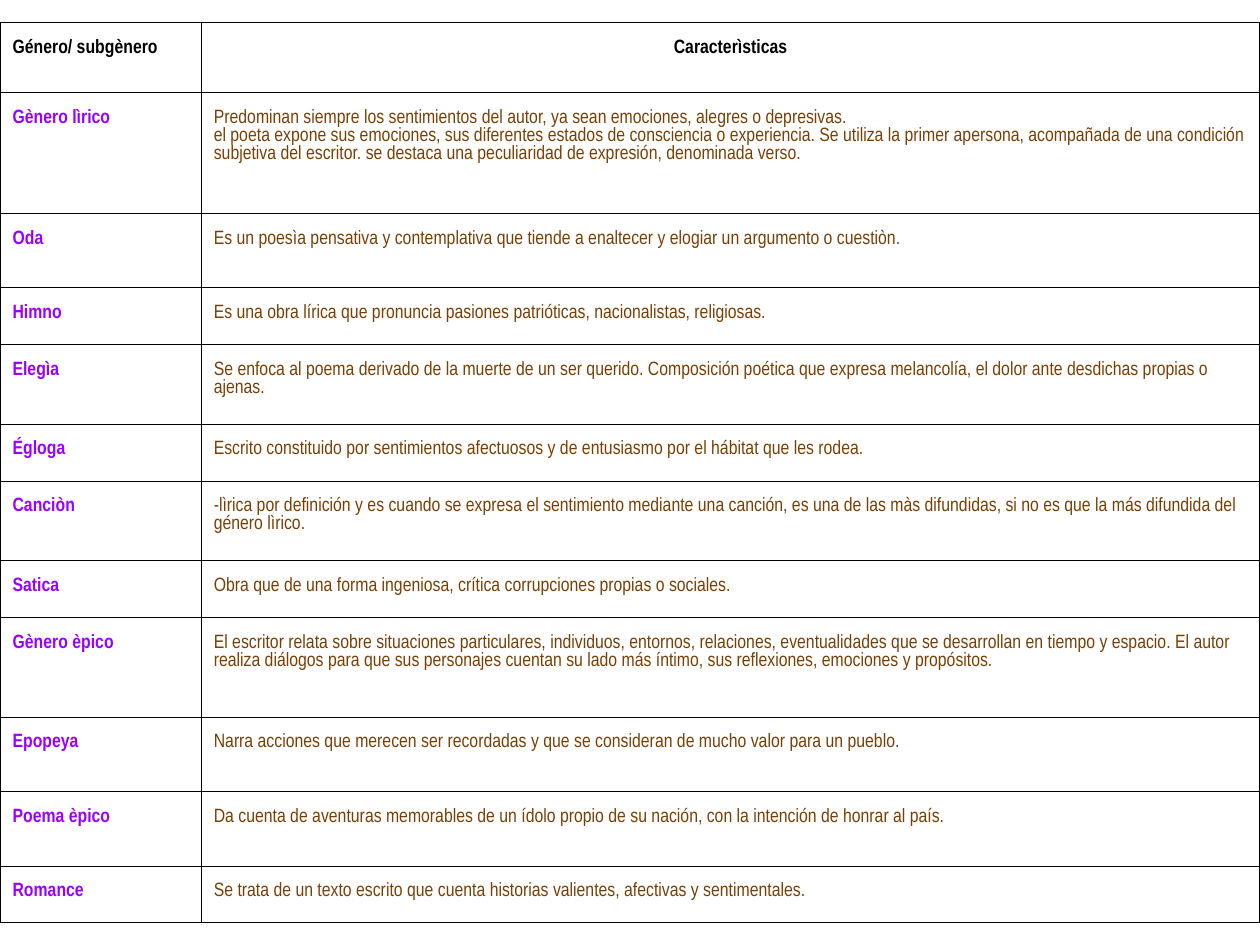
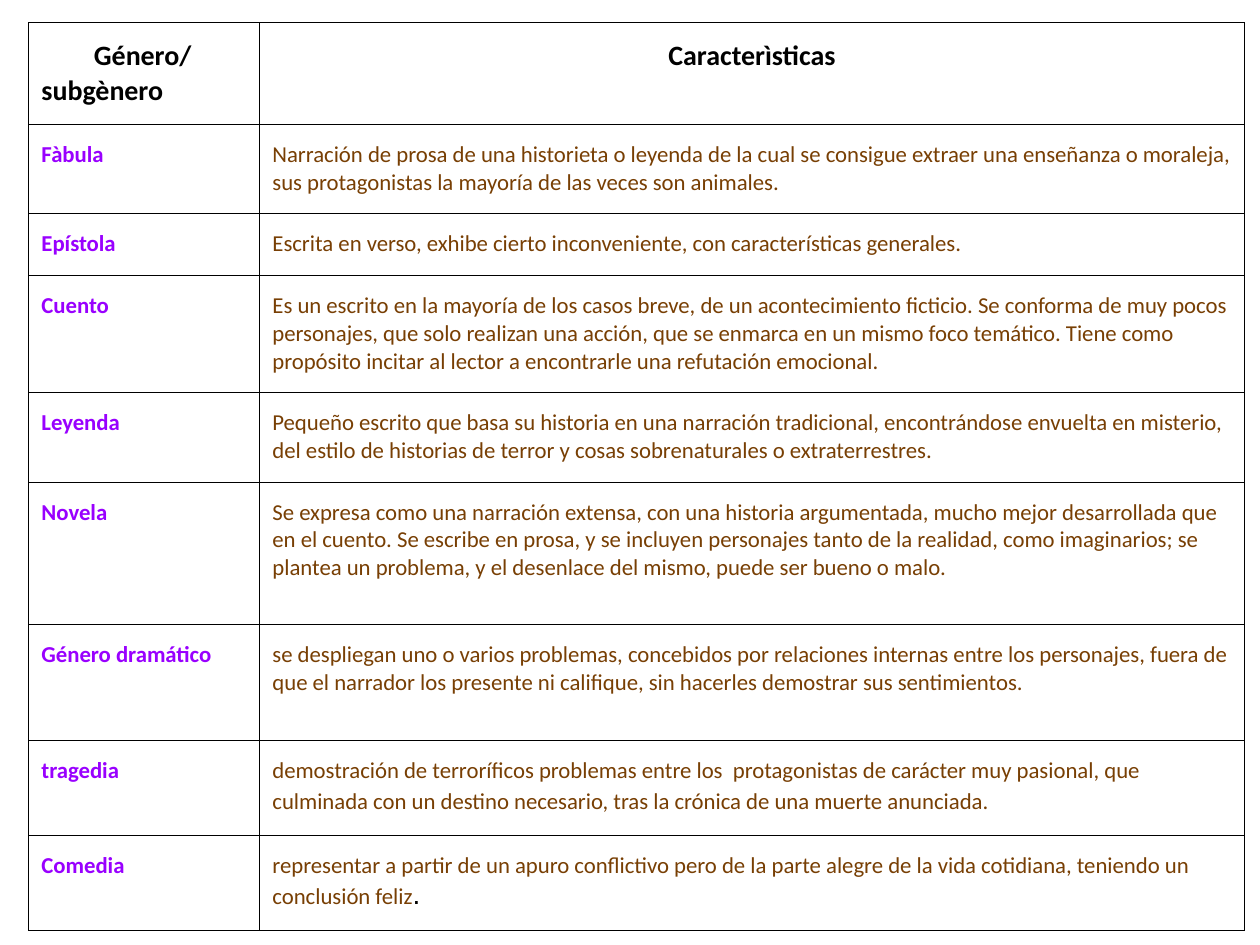
from pptx import Presentation
from pptx.dml.color import RGBColor
from pptx.enum.text import PP_ALIGN
from pptx.oxml.ns import qn
from pptx.util import Pt
from lxml import etree

LEFT, CENTER = PP_ALIGN.LEFT, PP_ALIGN.CENTER
BLACK = RGBColor(0x00, 0x00, 0x00)
PURPLE = RGBColor(0x99, 0x00, 0xFF)
BROWN = RGBColor(0x78, 0x3F, 0x04)
BORDER_WIDTH = Pt(0.75)
TABLE_TOP = Pt(13)
HEADERS = ("Género/ subgènero", "Caracterìsticas")

# Each row: height in points, genre, paragraphs of its description
LYRIC_AND_EPIC = [
    (69, "Gènero lìrico", [
        "Predominan siempre los sentimientos del autor, ya sean emociones, alegres o depresivas.",
        "el poeta expone sus emociones, sus diferentes estados de consciencia o experiencia. "
        "Se utiliza la primer apersona, acompañada de una condición subjetiva del escritor. "
        "se destaca una peculiaridad de expresión, denominada verso."]),
    (42.5, "Oda", [
        "Es un poesìa pensativa y contemplativa que tiende a enaltecer y elogiar un argumento "
        "o cuestiòn."]),
    (32.5, "Himno", [
        "Es una obra lírica que pronuncia pasiones patrióticas, nacionalistas, religiosas."]),
    (45.5, "Elegìa", [
        "Se enfoca al poema derivado de la muerte de un ser querido. Composición poética que "
        "expresa melancolía, el dolor ante desdichas propias o ajenas."]),
    (32.5, "Égloga", [
        "Escrito constituido por sentimientos afectuosos y de entusiasmo por el hábitat que "
        "les rodea."]),
    (45.5, "Canciòn", [
        "-lìrica por definición y es cuando se expresa el sentimiento mediante una canción, "
        "es una de las màs difundidas, si no es que la más difundida del género lìrico."]),
    (32.5, "Satica", [
        "Obra que de una forma ingeniosa, crítica corrupciones propias o sociales."]),
    (57, "Gènero èpico", [
        "El escritor relata sobre situaciones particulares, individuos, entornos, relaciones, "
        "eventualidades que se desarrollan en tiempo y espacio. El autor realiza diálogos para "
        "que sus personajes cuentan su lado más íntimo, sus reflexiones, emociones y propósitos."]),
    (42.5, "Epopeya", [
        "Narra acciones que merecen ser recordadas y que se consideran de mucho valor para "
        "un pueblo."]),
    (42.5, "Poema èpico", [
        "Da cuenta de aventuras memorables de un ídolo propio de su nación, con la intención "
        "de honrar al país."]),
    (32.5, "Romance", [
        "Se trata de un texto escrito que cuenta historias valientes, afectivas y sentimentales."]),
]
NARRATIVE_AND_DRAMA = [
    (51, "Fàbula", [
        "Narración de prosa de una historieta o leyenda de la cual se consigue extraer una "
        "enseñanza o moraleja, sus protagonistas la mayoría de las veces son animales."]),
    (35.5, "Epístola", [
        "Escrita en verso, exhibe cierto inconveniente, con características generales."]),
    (67, "Cuento", [
        "Es un escrito en la mayoría de los casos breve, de un acontecimiento ficticio. Se "
        "conforma de muy pocos personajes, que solo realizan una acción, que se enmarca en un "
        "mismo foco temático. Tiene como propósito incitar al lector a encontrarle una "
        "refutación emocional."]),
    (51, "Leyenda", [
        "Pequeño escrito que basa su historia en una narración tradicional, encontrándose "
        "envuelta en misterio, del estilo de historias de terror y cosas sobrenaturales o "
        "extraterrestres."]),
    (81.5, "Novela", [
        "Se expresa como una narración extensa, con una historia argumentada, mucho mejor "
        "desarrollada que en el cuento. Se escribe en prosa, y se incluyen personajes tanto de "
        "la realidad, como imaginarios; se plantea un problema, y el desenlace del mismo, puede "
        "ser bueno o malo."]),
    (66, "Género dramático", [
        "se despliegan uno o varios problemas, concebidos por relaciones internas entre los "
        "personajes, fuera de que el narrador los presente ni califique, sin hacerles demostrar "
        "sus sentimientos."]),
    (54.5, "tragedia", [
        "demostración de terroríficos problemas entre los  protagonistas de carácter muy "
        "pasional, que culminada con un destino necesario, tras la crónica de una muerte "
        "anunciada."]),
    (54.5, "Comedia", [
        "representar a partir de un apuro conflictivo pero de la parte alegre de la vida "
        "cotidiana, teniendo un conclusión feliz"]),
]
# Larger closing characters after a description
ENDINGS = {"tragedia": " ", "Comedia": "."}

PAGES = [
    dict(left=0, columns=(115, 605), font="Arial Narrow", header_size=11, size=11,
         header_height=40, header_indent=0, rows=LYRIC_AND_EPIC),
    dict(left=16.5, columns=(132, 562.5), font="Calibri", header_size=16, size=13,
         header_height=58, header_indent=30, rows=NARRATIVE_AND_DRAMA),
]


def add_text(para, text, *, font, size, color=BROWN, bold=False, align=LEFT):
    para.alignment = align
    span = para.add_run()
    span.text = text
    span.font.name = font
    span.font.size = Pt(size)
    span.font.bold = bold
    span.font.color.rgb = color


def format_cell(cell):
    """Set the margins, remove the fill and draw a black line on all four sides."""
    cell.margin_left = cell.margin_right = Pt(7.2)
    cell.margin_top = cell.margin_bottom = Pt(9.4)
    properties = cell._tc.get_or_add_tcPr()
    for side in ("a:lnL", "a:lnR", "a:lnT", "a:lnB"):
        line = etree.SubElement(properties, qn(side), w=str(BORDER_WIDTH))
        fill = etree.SubElement(line, qn("a:solidFill"))
        etree.SubElement(fill, qn("a:srgbClr"), val=str(BLACK))
    cell.fill.background()


deck = Presentation()
deck.slide_width, deck.slide_height = Pt(720), Pt(540)
blank = deck.slide_layouts[6]

for config in PAGES:
    page = deck.slides.add_slide(blank)
    rows, font, size = config["rows"], config["font"], config["size"]
    heights = [config["header_height"]] + [row[0] for row in rows]
    table = page.shapes.add_table(
        len(heights), 2, Pt(config["left"]), TABLE_TOP,
        Pt(sum(config["columns"])), Pt(sum(heights))).table
    table.first_row = table.horz_banding = False
    for column, width in zip(table.columns, config["columns"]):
        column.width = Pt(width)
    for row, height in zip(table.rows, heights):
        row.height = Pt(height)
    for cell in table.iter_cells():
        format_cell(cell)

    for index, (header, align) in enumerate(zip(HEADERS, (LEFT, CENTER))):
        para = table.cell(0, index).text_frame.paragraphs[0]
        add_text(para, header, font=font, size=config["header_size"],
                 color=BLACK, bold=True, align=align)
        if index == 0:
            para._p.get_or_add_pPr().set("indent", str(Pt(config["header_indent"])))

    for number, (_, genre, description) in enumerate(rows, start=1):
        add_text(table.cell(number, 0).text_frame.paragraphs[0], genre,
                 font=font, size=size, color=PURPLE, bold=True)
        frame = table.cell(number, 1).text_frame
        for position, text in enumerate(description):
            para = frame.add_paragraph() if position else frame.paragraphs[0]
            add_text(para, text, font=font, size=size)
        if genre in ENDINGS:
            add_text(para, ENDINGS[genre], font="Arial", size=16, color=BLACK)

deck.save("out.pptx")
